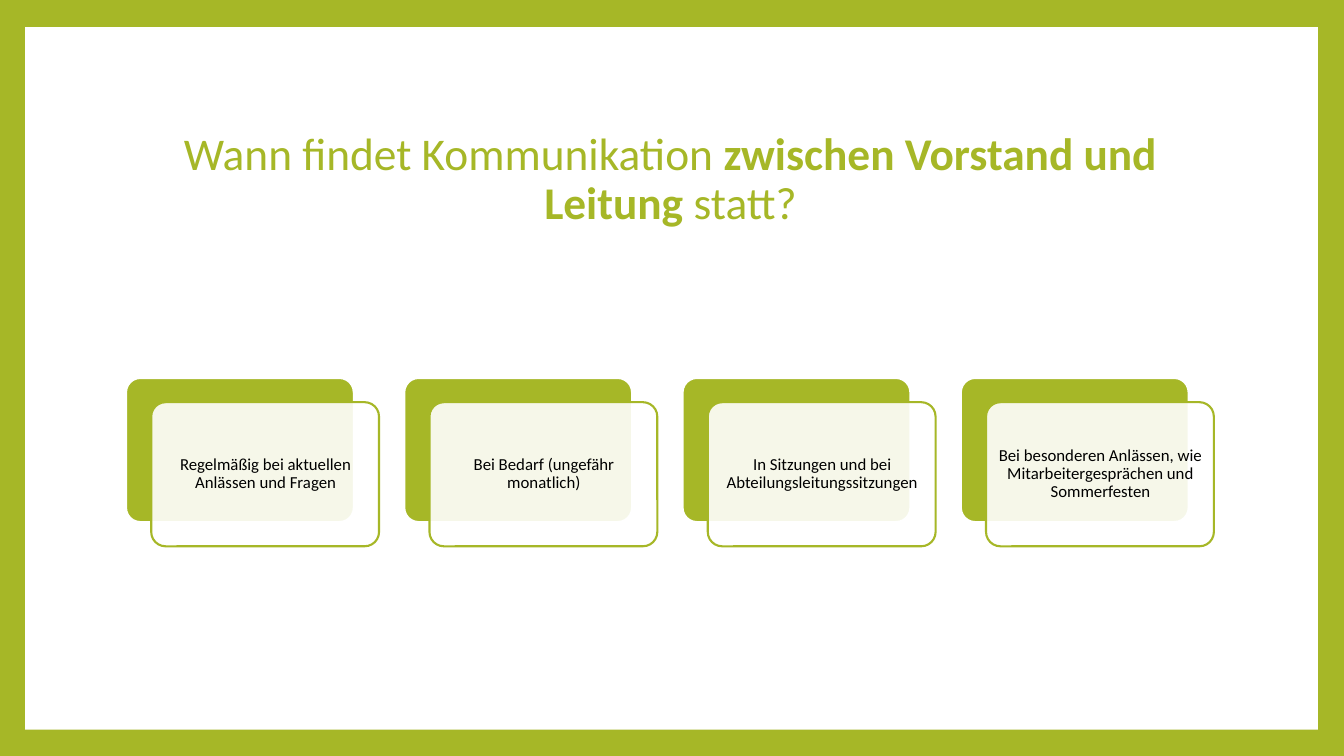
import pptx
import pptx.dml.color
import pptx.enum.shapes
import pptx.enum.text
import pptx.oxml
import pptx.oxml.ns
import pptx.util

Inches = pptx.util.Inches
Pt = pptx.util.Pt
SHAPES = pptx.enum.shapes.MSO_SHAPE
COLOURS = {"green": "A6B727", "white": "FFFFFF", "black": "000000"}
TITLE = [
    ("Wann findet Kommunikation ", False),
    ("zwischen Vorstand und Leitung ", True),
    ("statt?", False),
]
OCCASIONS = [
    "Regelmäßig bei aktuellen Anlässen und Fragen",
    "Bei Bedarf (ungefähr monatlich)",
    "In Sitzungen und bei Abteilungsleitungssitzungen",
    "Bei besonderen Anlässen, wie Mitarbeitergesprächen und Sommerfesten",
]
CARD_PITCH = 2.76


def colour(name):
    """Return the named colour."""
    return pptx.dml.color.RGBColor.from_string(COLOURS[name])


def add_panel(page, kind, box, fill, line=None, opacity=100):
    """Add a filled shape in the box, with an optional outline."""
    panel = page.shapes.add_shape(kind, *map(Inches, box))
    panel.shadow.inherit = False
    panel.fill.solid()
    panel.fill.fore_color.rgb = colour(fill)
    if opacity < 100:
        tint = panel.fill._xPr.find(".//" + pptx.oxml.ns.qn("a:srgbClr"))
        alpha = pptx.oxml.parse_xml(
            f'<a:alpha {pptx.oxml.ns.nsdecls("a")} val="{opacity * 1000}"/>')
        tint.append(alpha)
    if line:
        panel.line.color.rgb = colour(line)
        panel.line.width = Pt(1.5)
    else:
        panel.line.fill.background()
    return panel


def add_text(page, box, spans, size, ink, inset):
    """Add centred text made of (words, bold) spans and return its frame."""
    frame = page.shapes.add_textbox(*map(Inches, box)).text_frame
    frame.word_wrap = True
    frame.vertical_anchor = pptx.enum.text.MSO_ANCHOR.MIDDLE
    frame.margin_left = frame.margin_right = Inches(inset)
    frame.margin_top = frame.margin_bottom = Inches(0.05)
    para = frame.paragraphs[0]
    para.alignment = pptx.enum.text.PP_ALIGN.CENTER
    para.line_spacing = 0.9
    for words, bold in spans:
        span = para.add_run()
        span.text = words
        span.font.name = "Calibri"
        span.font.size = Pt(size)
        span.font.bold = bold
        span.font.color.rgb = colour(ink)
    return frame


def add_title(page, box):
    """Add the heading, raised above the middle of its box."""
    frame = add_text(page, box, TITLE, 32.4, "green", 0.1)
    frame.margin_bottom = Inches(0.49)


def add_card(page, box, words):
    """Add a green card with a translucent label card offset over it."""
    left, top, width, height = box
    label = (left + 0.25, top + 0.24, width, height)
    back = add_panel(page, SHAPES.ROUNDED_RECTANGLE, box, "green", "white")
    front = add_panel(page, SHAPES.ROUNDED_RECTANGLE, label, "white", "green", 90)
    back.adjustments[0] = front.adjustments[0] = 0.1
    inner = (label[0] + 0.05, label[1] + 0.04, width - 0.09, height - 0.08)
    frame = add_text(page, inner, [(words, False)], 12, "black", 0.05)
    frame.paragraphs[0].space_after = Pt(4.2)


def build_slide(deck):
    """Add the slide with its frame, title and row of cards."""
    page = deck.slides.add_slide(deck.slide_layouts[6])
    page.background.fill.solid()
    page.background.fill.fore_color.rgb = colour("green")
    add_panel(page, SHAPES.RECTANGLE, (0.25, 0.27, 12.82, 6.97), "white")
    add_title(page, (1.25, 1.27, 10.8, 1.48))
    for index, words in enumerate(OCCASIONS):
        add_card(page, (1.25 + index * CARD_PITCH, 3.75, 2.26, 1.43), words)


def main():
    """Build and save the deck."""
    deck = pptx.Presentation()
    deck.slide_width = Inches(13.33)
    deck.slide_height = Inches(7.5)
    build_slide(deck)
    deck.save("out.pptx")


if __name__ == "__main__":
    main()
